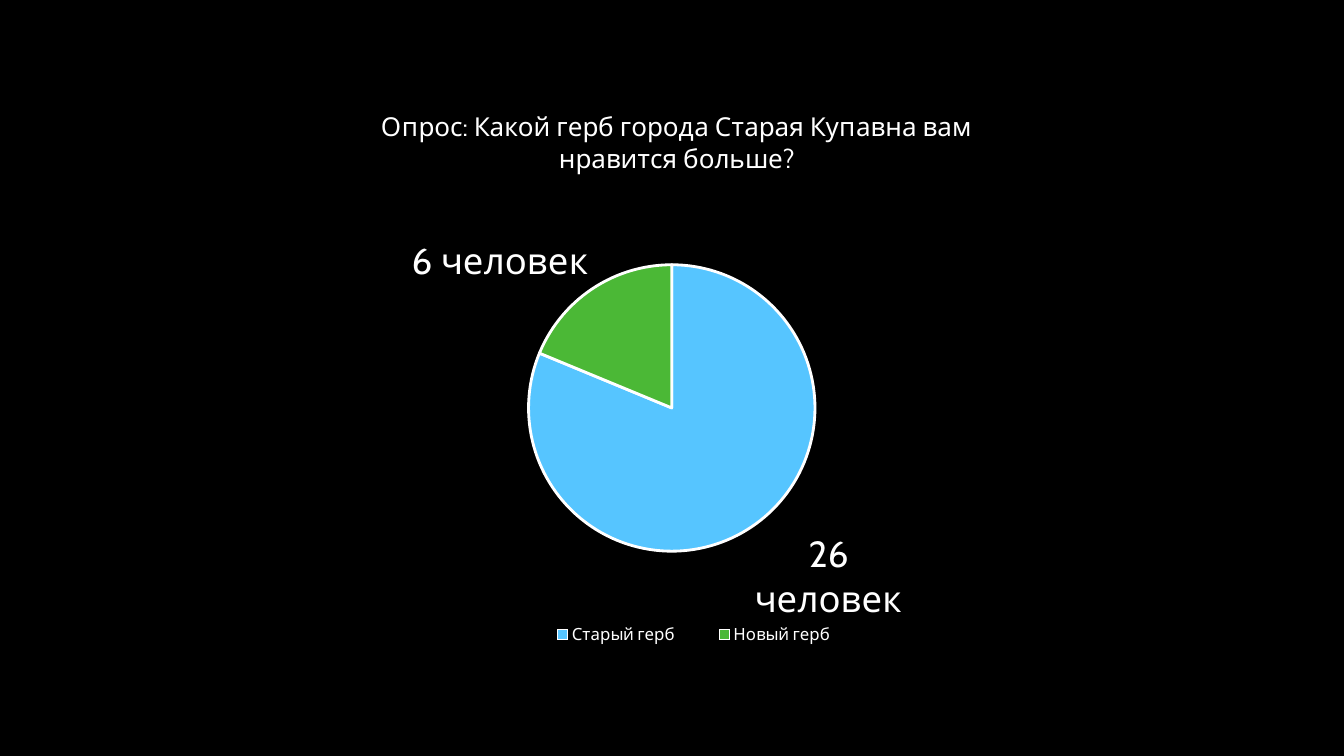
from lxml import etree
from pptx import Presentation
from pptx.chart.data import CategoryChartData
from pptx.dml.color import RGBColor
from pptx.enum.chart import XL_CHART_TYPE, XL_LABEL_POSITION, XL_LEGEND_POSITION
from pptx.oxml.ns import qn
from pptx.util import Cm, Pt

QUESTION = "Опрос: Какой герб города Старая Купавна вам нравится больше?"
ANSWERS = [
    ("Старый герб", 26, "56C5FF"),
    ("Новый герб", 6, "4BB836"),
]


def style_font(font, size):
    font.name = "Cabin"
    font.size = Pt(size)
    font.bold = False
    font.color.rgb = RGBColor.from_string("FFFFFF")


def place(element, predecessor, **settings):
    """Set a manual layout, in fractions of the chart, right after predecessor."""
    for old_layout in element.findall(qn("c:layout")):
        element.remove(old_layout)
    layout = etree.Element(qn("c:layout"))
    manual = etree.SubElement(layout, qn("c:manualLayout"))
    for name, value in settings.items():
        etree.SubElement(manual, qn(f"c:{name}")).set("val", str(value))
    if predecessor is None:
        element.insert(0, layout)
    else:
        predecessor.addnext(layout)


presentation = Presentation()
presentation.slide_width = Cm(33.87)
presentation.slide_height = Cm(19.05)
slide = presentation.slides.add_slide(presentation.slide_layouts[6])
slide.background.fill.solid()
slide.background.fill.fore_color.rgb = RGBColor.from_string("000000")

survey_data = CategoryChartData()
survey_data.categories = [name for name, votes, color in ANSWERS]
survey_data.add_series(QUESTION, [votes for name, votes, color in ANSWERS])
chart = slide.shapes.add_chart(
    XL_CHART_TYPE.PIE, Cm(5.64), Cm(2.01), Cm(22.58), Cm(15.04), survey_data
).chart
style_font(chart.font, 10)

# Title
chart.has_title = True
title = chart.chart_title
title.include_in_layout = False
title_paragraph = title.text_frame.paragraphs[0]
title_paragraph.text = QUESTION
style_font(title_paragraph.font, 18.6)
title_element = title._element
place(title_element, title_element.find(qn("c:tx")),
      xMode="edge", yMode="edge", x=0.17, y=0.04)

# Legend
chart.has_legend = True
legend = chart.legend
legend.position = XL_LEGEND_POSITION.BOTTOM
legend.include_in_layout = False
style_font(legend.font, 12)
legend_element = legend._element
place(legend_element, legend_element.find(qn("c:legendPos")),
      xMode="edge", yMode="edge", x=0.33, y=0.9, w=0.39, h=0.06)

# Pie
plot = chart.plots[0]
plot.vary_by_categories = True
place(chart._chartSpace.chart.plotArea, None,
      layoutTarget="inner", xMode="edge", yMode="edge",
      x=0.34, y=0.31, w=0.32, h=0.48)
series = plot.series[0]
labels = series.data_labels
labels.show_value = True
labels.position = XL_LABEL_POSITION.OUTSIDE_END
style_font(labels.font, 26)

for index, (name, votes, color) in enumerate(ANSWERS):
    point = series.points[index]
    point.format.fill.solid()
    point.format.fill.fore_color.rgb = RGBColor.from_string(color)
    point.format.line.color.rgb = RGBColor.from_string("FFFFFF")
    point.format.line.width = Pt(2)
    label = point.data_label
    label_paragraph = label.text_frame.paragraphs[0]
    label_run = label_paragraph.add_run()
    label_run.text = f"{votes} человек"
    style_font(label_run.font, 26)
    label.position = XL_LABEL_POSITION.OUTSIDE_END

presentation.save("out.pptx")
